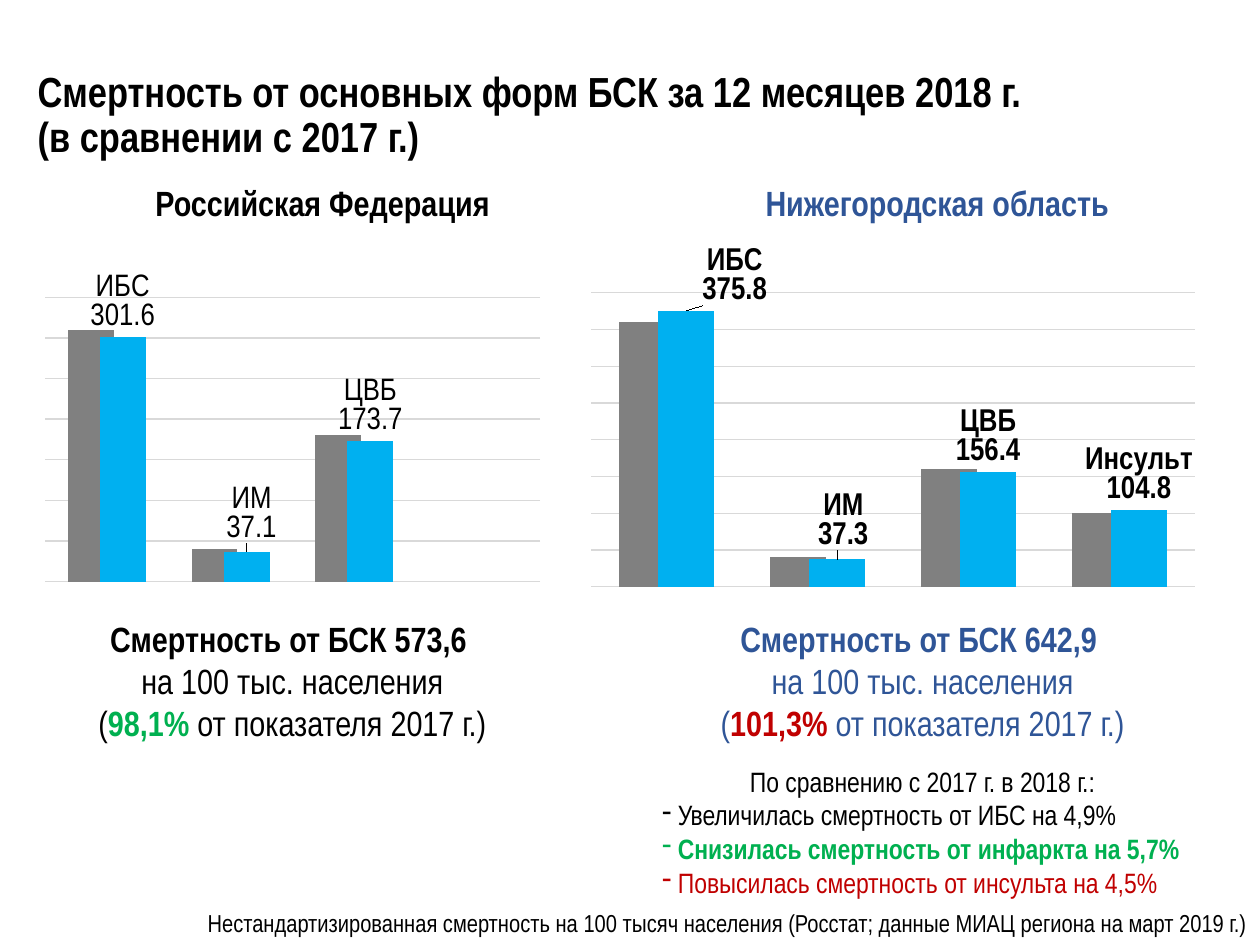
from copy import deepcopy

from pptx import Presentation
from pptx.chart.data import CategoryChartData
from pptx.dml.color import RGBColor
from pptx.enum.chart import XL_CHART_TYPE, XL_LABEL_POSITION
from pptx.enum.text import MSO_ANCHOR, PP_ALIGN
from pptx.oxml import parse_xml
from pptx.oxml.ns import nsdecls, qn
from pptx.util import Cm, Pt

COLUMNS = XL_CHART_TYPE.COLUMN_CLUSTERED
OUTSIDE = XL_LABEL_POSITION.OUTSIDE_END
MIDDLE, TOP = MSO_ANCHOR.MIDDLE, MSO_ANCHOR.TOP
LEFT, CENTER, RIGHT = PP_ALIGN.LEFT, PP_ALIGN.CENTER, PP_ALIGN.RIGHT

FONT = "Arial Narrow"
BLACK, BLUE, GREEN, RED = "000000", "2F5597", "00B050", "C00000"
GREY, CYAN, GRID = "808080", "00B0F0", "D9D9D9"
CATEGORIES = ["ИБС", "ИМ", "ЦВБ", "Инсульт"]


def rgb(value):
    return RGBColor.from_string(value)


def span(text, color=BLACK, bold=False):
    return text, color, bold


def line(*spans, size=20, align=CENTER, before=0, bullet=False):
    return {"spans": spans, "size": size, "align": align,
            "before": before, "bullet": bullet}


def add_text(page, box, lines, anchor=TOP, spacing=None):
    """Place a text box made of lines, each a list of formatted spans."""
    frame = page.shapes.add_textbox(*(Cm(v) for v in box)).text_frame
    frame.word_wrap = True
    frame.vertical_anchor = anchor
    for index, item in enumerate(lines):
        para = frame.add_paragraph() if index else frame.paragraphs[0]
        para.alignment = item["align"]
        para.space_before = Pt(item["before"])
        para.line_spacing = spacing
        if item["bullet"]:
            props = para._p.get_or_add_pPr()
            props.append(parse_xml(f'<a:buChar {nsdecls("a")} char="-"/>'))
        for text, color, bold in item["spans"]:
            if len(item["spans"]) == 1:
                para.text = text
                runs = para.runs
            else:
                run = para.add_run()
                run.text = text
                runs = [run]
            for run in runs:
                run.font.name = FONT
                run.font.size = Pt(item["size"])
                run.font.bold = bold
                run.font.color.rgb = rgb(color)


def layout_xml(**values):
    parts = "".join(f'<c:{key} val="{value}"/>' for key, value in values.items())
    return parse_xml(f'<c:layout {nsdecls("c")}><c:manualLayout>{parts}'
                     '</c:manualLayout></c:layout>')


def label_series(series, bold, shifts):
    """Show category and value above the columns; shift single labels."""
    labels = series.data_labels
    labels.show_value = True
    labels.show_category_name = True
    labels.number_format = "0.0"
    labels.number_format_is_linked = False
    labels.position = OUTSIDE
    labels.font.name = FONT
    labels.font.size = Pt(18)
    labels.font.bold = bold
    labels.font.color.rgb = rgb(BLACK)
    root = labels._element
    separator = parse_xml(f'<c:separator {nsdecls("c")}>\n</c:separator>')
    root.find(qn("c:showBubbleSize")).addnext(separator)
    shared = [part for part in root if part.tag != qn("c:showLeaderLines")]
    for place, (index, (x, y)) in enumerate(shifts.items()):
        label = parse_xml(f'<c:dLbl {nsdecls("c")}><c:idx val="{index}"/></c:dLbl>')
        label.append(layout_xml(x=x, y=y))
        for part in shared:
            label.append(deepcopy(part))
        root.insert(place, label)


def add_columns(page, box, before, after, top, plot, bold, shifts):
    """Place a column chart of two years without visible axes."""
    data = CategoryChartData(number_format="0.0")
    data.categories = CATEGORIES
    data.add_series("Series 1", before)
    data.add_series("Series 2", after)
    chart = page.shapes.add_chart(COLUMNS, *(Cm(v) for v in box), data).chart
    chart.has_title = False
    chart.has_legend = False
    chart.font.name = "Calibri"
    chart.font.size = Pt(18)
    chart.font.color.rgb = rgb(BLACK)

    # Axes and grid
    chart.category_axis.visible = False
    axis = chart.value_axis
    axis.visible = False
    axis.minimum_scale, axis.maximum_scale, axis.major_unit = 0, top, 50
    axis.tick_labels.number_format = "0.0"
    axis.tick_labels.number_format_is_linked = False
    axis.has_major_gridlines = True
    axis.major_gridlines.format.line.color.rgb = rgb(GRID)
    axis.major_gridlines.format.line.width = Pt(0.75)

    # Columns and labels
    columns = chart.plots[0]
    columns.vary_by_categories = False
    columns.gap_width, columns.overlap = 100, 30
    for series, color in zip(columns.series, (GREY, CYAN)):
        series.format.fill.solid()
        series.format.fill.fore_color.rgb = rgb(color)
    label_series(columns.series[1], bold, shifts)

    # Plot position and clear background
    body = chart._chartSpace.find(qn("c:chart"))
    area = body.find(qn("c:plotArea"))
    for old in area.findall(qn("c:layout")):
        area.remove(old)
    area.insert(0, layout_xml(layoutTarget="inner", xMode="edge", yMode="edge",
                              x=0, y=plot[0], w=1, h=plot[1]))
    body.addnext(parse_xml(f'<c:spPr {nsdecls("c", "a")}><a:noFill/>'
                           '<a:ln><a:noFill/></a:ln></c:spPr>'))


def summary(rate, share, color, share_color):
    return [line(span(f"Смертность от БСК {rate} ", color, True)),
            line(span("на 100 тыс. населения", color)),
            line(span("(", color), span(share, share_color, True),
                 span(" от показателя 2017 г.)", color))]


def add_russia(page, left, top, width):
    """Left region: heading, chart and summary for the country."""
    add_text(page, (left + 0.61, top, width, 1.12),
             [line(span("Российская Федерация", BLACK, True))])
    add_columns(page, (left, top + 2.01, width, 6.2),
                (310, 40, 180, None), (301.6, 37.1, 173.7, None),
                350, (0.06, 0.94), False, {1: (0.01, -0.01)})
    add_text(page, (left, top + 8.79, width, 2.82),
             summary("573,6", "98,1%", BLACK, GREEN))


def add_region(page, left, top, width):
    """Right region: heading, chart, summary and changes for the region."""
    add_text(page, (left + 1.98, top, 10.01, 1.12),
             [line(span("Нижегородская область", BLUE, True))])
    add_columns(page, (left, top + 0.58, width, 7.8),
                (360, 40, 160, 100), (375.8, 37.3, 156.4, 104.8),
                400, (0.23, 0.76), True, {0: (0.08, 0), 1: (0.01, -0.01)})
    changes = [
        line(span("По сравнению с 2017 г. в 2018 г.:"), size=16, before=12),
        line(span(" Увеличилась смертность от ИБС на 4,9%"),
             size=16, align=LEFT, bullet=True),
        line(span(" ", GREEN),
             span("Снизилась смертность от инфаркта на 5,7%", GREEN, True),
             size=16, align=LEFT, bullet=True),
        line(span(" Повысилась смертность от инсульта на 4,5%", RED),
             size=16, align=LEFT, bullet=True)]
    add_text(page, (left + 1.19, top + 8.79, width - 1.19, 5.99),
             summary("642,9", "101,3%", BLUE, RED) + changes)


def main():
    deck = Presentation()
    deck.slide_width, deck.slide_height = Cm(25.4), Cm(19.05)
    page = deck.slides.add_slide(deck.slide_layouts[6])

    # Title
    title = "Смертность от основных форм БСК за 12 месяцев 2018 г.\v(в сравнении с 2017 г.)"
    add_text(page, (0.51, 0.76, 24.21, 3.18),
             [line(span(title, BLACK, True), size=24, align=LEFT)], MIDDLE, 0.9)

    # Two regions side by side
    add_russia(page, 0.89, 3.53, 10.01)
    add_region(page, 11.91, 3.53, 12.19)

    # Source note
    note = ("Нестандартизированная смертность на 100 тысяч населения "
            "(Росстат; данные МИАЦ региона на март 2019 г.)")
    add_text(page, (2.69, 18.19, 22.71, 0.86),
             [line(span(note), size=14, align=RIGHT)])
    deck.save("out.pptx")


if __name__ == "__main__":
    main()
